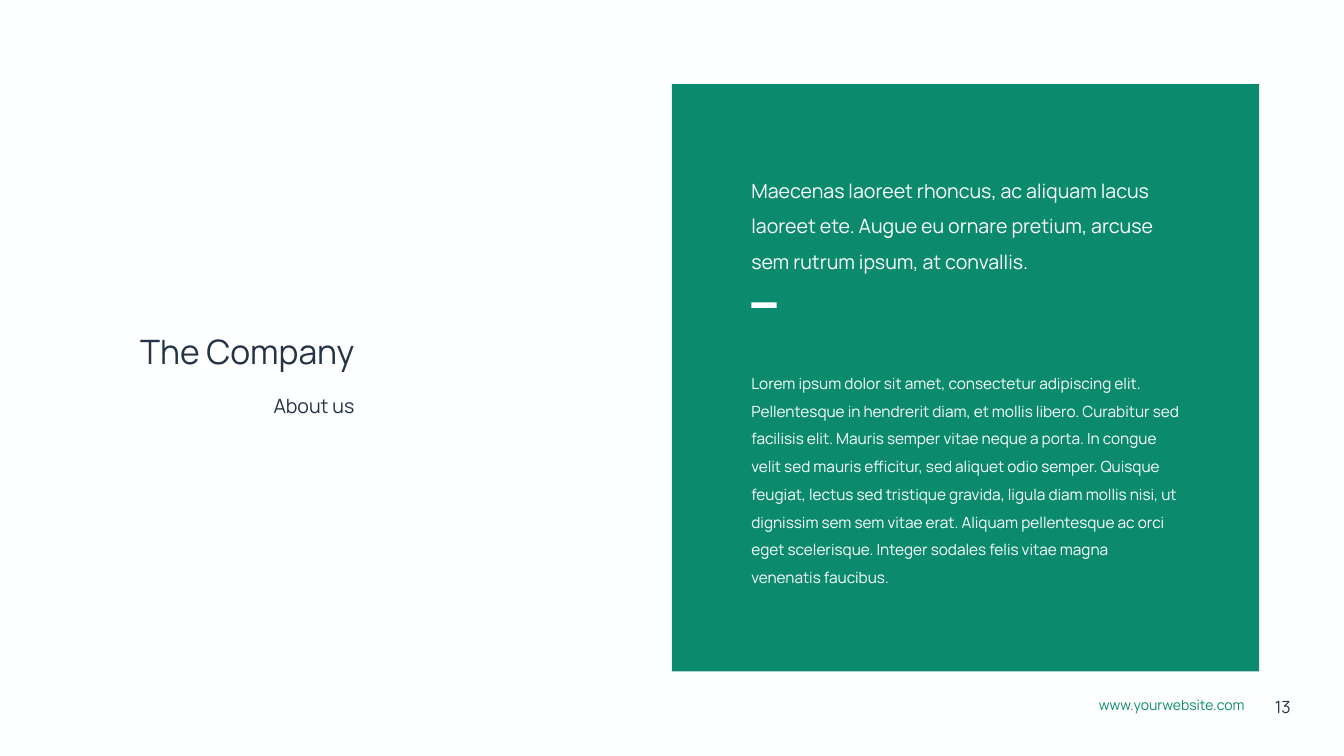
"""Build the company introduction slide with its green text panel."""
from pptx import Presentation
from pptx import util as u
from pptx.dml.color import RGBColor
from pptx.enum import shapes, text

COLORS = {"paper": "FEFFFF", "ink": "233348", "green": "0B8A6D"}
FONT = "Manrope"
SLIDE = (67.74, 38.1)
HEADING_LEFT, HEADING_WIDTH = 4.27, 13.59
PANEL_LEFT, PANEL_TOP, PANEL_SIDE = 33.87, 4.24, 29.6
COPY_LEFT, COPY_WIDTH = 37.87, 21.6

RIGHT = {"alignment": text.PP_ALIGN.RIGHT}
LEFT = {"alignment": text.PP_ALIGN.LEFT}
OPEN = {**LEFT, "line_spacing": 1.5}
FLUSH = dict.fromkeys(("margin_left", "margin_top", "margin_right", "margin_bottom"), 0)

PANELS = [
    ((PANEL_LEFT, PANEL_TOP, PANEL_SIDE, PANEL_SIDE), "green"),
    ((COPY_LEFT, 15.24, 1.27, 0.28), "paper"),
]
TITLE = ("The Company", (HEADING_LEFT, 16.66, HEADING_WIDTH, 2.06), 48, "ink", RIGHT, FLUSH)
TEXTS = [
    ("13", (64.01, 35, 1.9, 1.07), 24, "ink", LEFT, {}),
    ("www.yourwebsite.com", (55.14, 34.98, 8.59, 1.09), 20, "green", LEFT, {}),
    ("About us", (HEADING_LEFT, 19.84, HEADING_WIDTH, 1.19), 28, "ink", RIGHT, FLUSH),
    ("Maecenas laoreet rhoncus, ac aliquam lacus laoreet ete. Augue eu ornare pretium, "
     "arcuse sem rutrum ipsum, at convallis.",
     (COPY_LEFT, 8.43, COPY_WIDTH, 5.38), 28, "paper", OPEN, FLUSH),
    ("Lorem ipsum dolor sit amet, consectetur adipiscing elit. Pellentesque in hendrerit "
     "diam, et mollis libero. Curabitur sed facilisis elit. Mauris semper vitae neque a "
     "porta. In congue velit sed mauris efficitur, sed aliquet odio semper. Quisque feugiat, "
     "lectus sed tristique gravida, ligula diam mollis nisi, ut dignissim sem sem vitae erat. "
     "Aliquam pellentesque ac orci eget scelerisque. Integer sodales felis vitae magna "
     "venenatis faucibus.",
     (COPY_LEFT, 18.39, COPY_WIDTH, 11.28), 22, "paper", OPEN, FLUSH),
]


def rgb(name):
    """Return the named colour."""
    return RGBColor.from_string(COLORS[name])


def assign(target, values):
    """Set every attribute in values on target."""
    for key, value in values.items():
        setattr(target, key, value)


def place(box):
    """Turn a box in centimetres into lengths."""
    return [u.Cm(length) for length in box]


def write(holder, wording, box, size, color, layout, margins):
    """Position a text holder and fill it with formatted wording."""
    assign(holder, dict(zip(("left", "top", "width", "height"), place(box))))
    frame = holder.text_frame
    assign(frame, {"word_wrap": True, "auto_size": text.MSO_AUTO_SIZE.NONE,
                   "vertical_anchor": text.MSO_ANCHOR.TOP, **margins})
    paragraph = frame.paragraphs[0]
    assign(paragraph, layout)
    run = paragraph.add_run()
    run.text = wording
    assign(run.font, {"name": FONT, "size": u.Pt(size)})
    run.font.color.rgb = rgb(color)


def main():
    """Assemble and save the slide."""
    deck = Presentation()
    deck.slide_width, deck.slide_height = place(SLIDE)
    slide = deck.slides.add_slide(deck.slide_layouts[5])
    slide.background.fill.solid()
    slide.background.fill.fore_color.rgb = rgb("paper")

    write(slide.shapes.title, *TITLE)
    for box, color in PANELS:
        panel = slide.shapes.add_shape(shapes.MSO_SHAPE.RECTANGLE, *place(box))
        panel.shadow.inherit = False
        panel.fill.solid()
        panel.fill.fore_color.rgb = rgb(color)
        panel.line.fill.background()
    for wording, box, *style in TEXTS:
        write(slide.shapes.add_textbox(*place(box)), wording, box, *style)
    deck.save("out.pptx")


if __name__ == "__main__":
    main()
